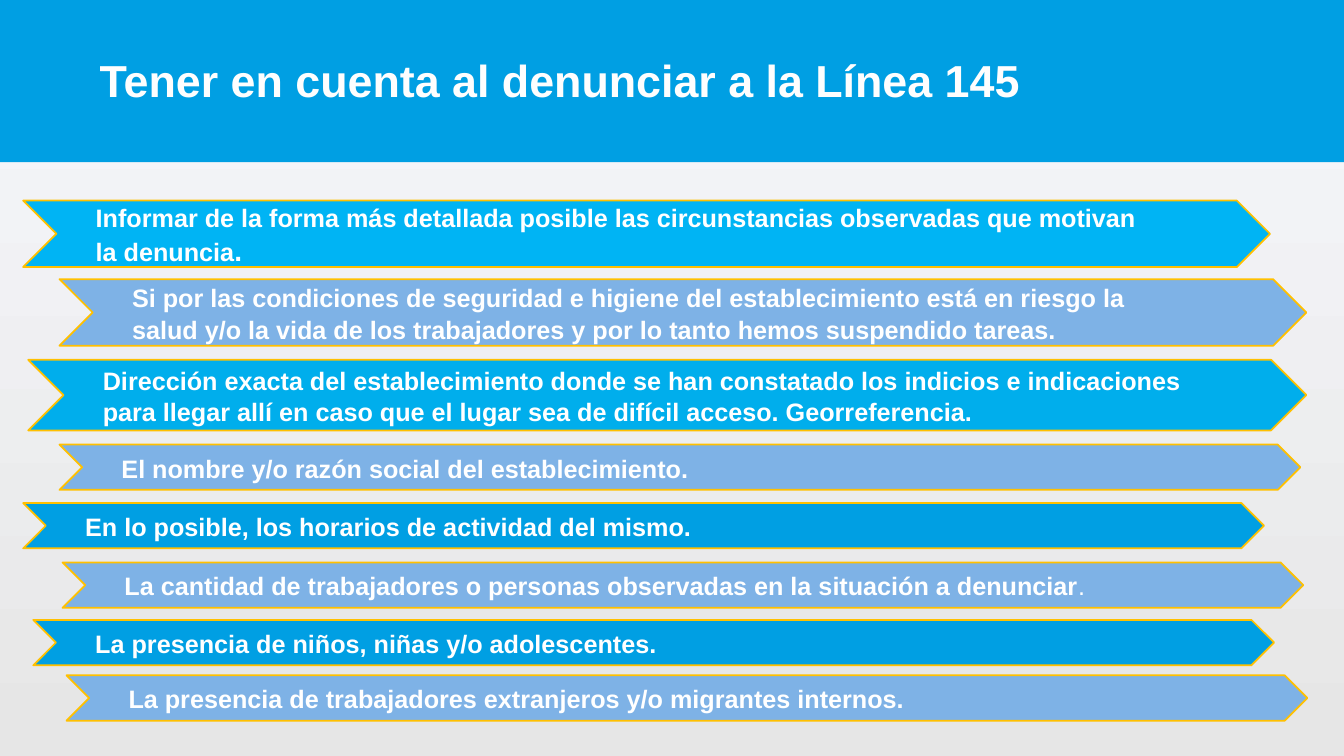
from pptx import Presentation
from pptx.dml.color import RGBColor
from pptx.enum.shapes import MSO_SHAPE
from pptx.enum.text import MSO_ANCHOR, PP_ALIGN
from pptx.util import Inches, Pt

RECT, CHEVRON = MSO_SHAPE.RECTANGLE, MSO_SHAPE.CHEVRON
MIDDLE, LEFT = MSO_ANCHOR.MIDDLE, PP_ALIGN.LEFT
COLS, ROWS = 133.33, 75  # grid cells of a tenth of an inch
WIDE, TALL = 123.7, 6.6  # arrow with two lines of text
LONG, SLIM = 123.1, 4.5  # arrow with one line

HEX = {
    "banner": "009FE3", "title": "FEFEFE", "text": "FFFFFF", "edge": "FFC000",
    "sky": "00B4F4", "cyan": "00AEEC", "blue": "009FE3", "pale": "7EB2E6",
    "top": "F6F7FB", "base": "E6E6E6",
}

# left, top, width, height, fill, lines of (text, changes) runs
STEPS = [
    (2.3, 19.9, WIDE, TALL, "sky", [
        [("Informar de la forma más detallada posible las circunstancias observadas que motivan", {})],
        [("la denuncia", {}), (".", {"size": 20})]]),
    (5.9, 27.7, WIDE, TALL, "pale", [
        [("Si por las condiciones de seguridad e higiene del establecimiento está en riesgo la", {})],
        [("salud y/o la vida de los trabajadores y por lo tanto hemos suspendido tareas.", {})]]),
    (2.8, 35.7, 126.8, 7, "cyan", [
        [("Dirección exacta del establecimiento donde se han constatado los indicios e indicaciones", {})],
        [("para llegar allí en caso que el lugar sea de difícil acceso. Georreferencia.", {})]]),
    (5.9, 44.1, LONG, SLIM, "pale", [
        [("El nombre y/o razón social del establecimiento.", {})]]),
    (2.3, 49.9, LONG, SLIM, "blue", [
        [("En lo posible, los horarios de actividad del mismo.", {})]]),
    (6.2, 55.8, LONG, SLIM, "pale", [
        [("La cantidad de trabajadores o personas observadas en la situación a denunciar", {}),
         (".", {"bold": False})]]),
    (3.3, 61.5, LONG, SLIM, "blue", [
        [("La presencia de niños, niñas y/o adolescentes.", {})]]),
    (6.6, 67, LONG, SLIM, "pale", [
        [("La presencia de trabajadores extranjeros y/o migrantes internos.", {})]]),
]


class Deck:
    font = "Arial"

    def __init__(self):
        self.prs = Presentation()
        self.prs.slide_width = self.cell(COLS)
        self.prs.slide_height = self.cell(ROWS)
        self.slide = self.prs.slides.add_slide(self.prs.slide_layouts[6])

    def cell(self, count):
        return Inches(count / 10)

    def tint(self, name):
        return RGBColor.from_string(HEX[name])

    def ground(self):
        fill = self.slide.background.fill
        fill.gradient()
        fill.gradient_angle = 270  # counter-clockwise, so top to bottom
        for stop, name, place in zip(fill.gradient_stops, ("top", "base"), (0.03, 1)):
            stop.color.rgb = self.tint(name)
            stop.position = place

    def shape(self, kind, box, fill, edge=None):
        item = self.slide.shapes.add_shape(kind, *map(self.cell, box))
        item.shadow.inherit = False
        item.fill.solid()
        item.fill.fore_color.rgb = self.tint(fill)
        if edge:
            item.line.color.rgb = self.tint(edge)
            item.line.width = Pt(1.25)
        else:
            item.line.fill.background()
        return item

    def label(self, frame, lines, size, color, space=1.0):
        frame.word_wrap = True
        frame.vertical_anchor = MIDDLE
        for i, line in enumerate(lines):
            para = frame.add_paragraph() if i else frame.paragraphs[0]
            para.alignment = LEFT
            para.line_spacing = space
            for text, change in line:
                run = para.add_run()
                run.text = text
                run.font.name = self.font
                run.font.size = Pt(change.get("size", size))
                run.font.bold = change.get("bold", True)
                run.font.color.rgb = self.tint(color)

    def title(self, box, text):
        item = self.slide.shapes.add_textbox(*map(self.cell, box))
        self.label(item.text_frame, [[(text, {})]], 32, "title")

    def arrow(self, box, fill, lines):
        item = self.shape(CHEVRON, box, fill, "edge")
        item.adjustments[0] = 0.5
        item.text_frame.margin_left = self.cell(3.9)
        self.label(item.text_frame, lines, 18, "text", 1.05)


def main():
    deck = Deck()
    deck.ground()
    deck.shape(RECT, (0, 0, COLS, 16.1), "banner")
    deck.title((8.9, 2.6, 115.6, 10.6), "Tener en cuenta al denunciar a la Línea 145")
    for *box, fill, lines in STEPS:
        deck.arrow(box, fill, lines)
    deck.prs.save("out.pptx")


if __name__ == "__main__":
    main()
